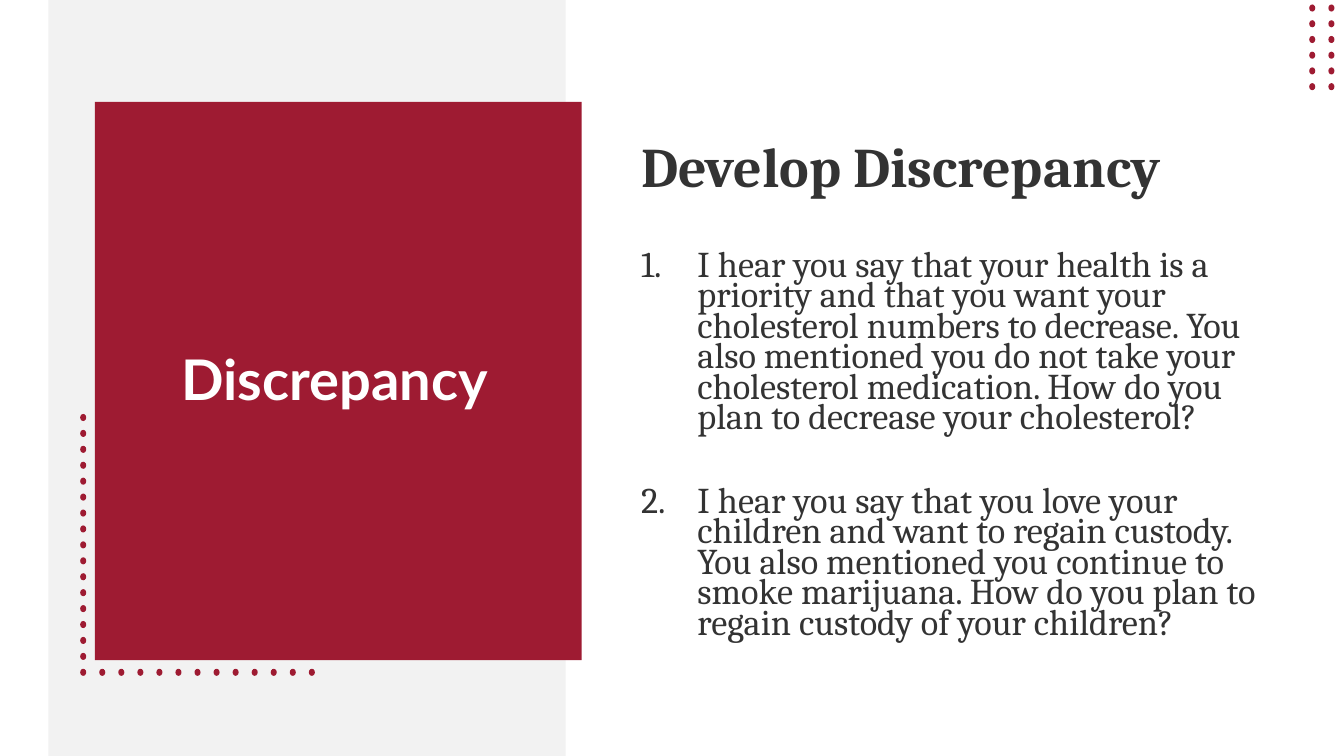
from lxml import etree
from pptx import Presentation
from pptx.dml.color import RGBColor
from pptx.enum.shapes import MSO_SHAPE
from pptx.enum.text import MSO_ANCHOR, PP_ALIGN
from pptx.oxml.ns import qn
from pptx.util import Inches, Pt

RECTANGLE = MSO_SHAPE.RECTANGLE
OVAL = MSO_SHAPE.OVAL
TOP = MSO_ANCHOR.TOP
MIDDLE = MSO_ANCHOR.MIDDLE
LEFT = PP_ALIGN.LEFT
CENTER = PP_ALIGN.CENTER

CRIMSON = "9E1B32"
PALE_GRAY = "F2F2F2"
WHITE = "FFFFFF"
CHARCOAL = "333333"

STATEMENTS = [
    ("I hear you say that your health is a priority and that you want your "
     "cholesterol numbers to decrease. You also mentioned you do not take your "
     "cholesterol medication. How do you plan to decrease your cholesterol?", 40),
    ("I hear you say that you love your children and want to regain custody. "
     "You also mentioned you continue to smoke marijuana. How do you plan to "
     "regain custody of your children?", 38),
]


def color(value):
    return RGBColor.from_string(value)


def add_filled(shapes, kind, left, top, width, height, fill):
    shape = shapes.add_shape(kind, Inches(left), Inches(top), Inches(width), Inches(height))
    shape.shadow.inherit = False
    shape.fill.solid()
    shape.fill.fore_color.rgb = color(fill)
    shape.line.fill.background()
    return shape


def add_dots(page, positions):
    group = page.shapes.add_group_shape()
    for left, top in positions:
        dot = add_filled(group.shapes, OVAL, left, top, 0.07, 0.06, CRIMSON)
        dot.rotation = 90


def add_text_frame(page, left, top, width, height, anchor):
    box = page.shapes.add_textbox(Inches(left), Inches(top), Inches(width), Inches(height))
    frame = box.text_frame
    frame.word_wrap = True
    frame.vertical_anchor = anchor
    return frame


def write(para, text, font, size, fill, bold, align, line_spacing, before=0):
    para.text = text
    para.alignment = align
    para.line_spacing = line_spacing
    para.space_before = Pt(before)
    para.font.name = font
    para.font.size = Pt(size)
    para.font.bold = bold
    para.font.color.rgb = color(fill)


def number(para, indent):
    properties = para._p.get_or_add_pPr()
    properties.set("marL", str(Inches(indent)))
    properties.set("indent", str(-Inches(indent)))
    bullet = etree.Element(qn("a:buAutoNum"), type="arabicPeriod")
    properties.find(qn("a:defRPr")).addprevious(bullet)


def main():
    deck = Presentation()
    deck.slide_width = Inches(13.33)
    deck.slide_height = Inches(7.5)
    page = deck.slides.add_slide(deck.slide_layouts[6])

    add_filled(page.shapes, RECTANGLE, 0.48, 0, 5.13, 7.5, PALE_GRAY)
    add_filled(page.shapes, RECTANGLE, 0.94, 1.01, 4.83, 5.54, CRIMSON)

    column = [(0.79, 6.64 - 0.158 * step) for step in range(17)]
    row = [(0.79 + 0.189 * step, 6.64) for step in range(1, 13)]
    add_dots(page, column + row)

    title = add_text_frame(page, 1.25, 1.45, 4.14, 4.68, MIDDLE)
    write(title.paragraphs[0], "Discrepancy", "Lato", 40, WHITE, True, CENTER, 0.9)

    corner = [(left, 0.05 + 0.156 * step) for step in range(6) for left in (12.98, 13.17)]
    add_dots(page, corner)

    body = add_text_frame(page, 6.26, 1.44, 6.5, 5.2, TOP)
    write(body.paragraphs[0], "Develop Discrepancy", "Cambria", 39.9, CHARCOAL, True, LEFT, 0.7)
    for statement, before in STATEMENTS:
        para = body.add_paragraph()
        write(para, statement, "Cambria", 25.9, CHARCOAL, False, LEFT, 0.7, before)
        number(para, 0.56)

    deck.save("out.pptx")


if __name__ == "__main__":
    main()
